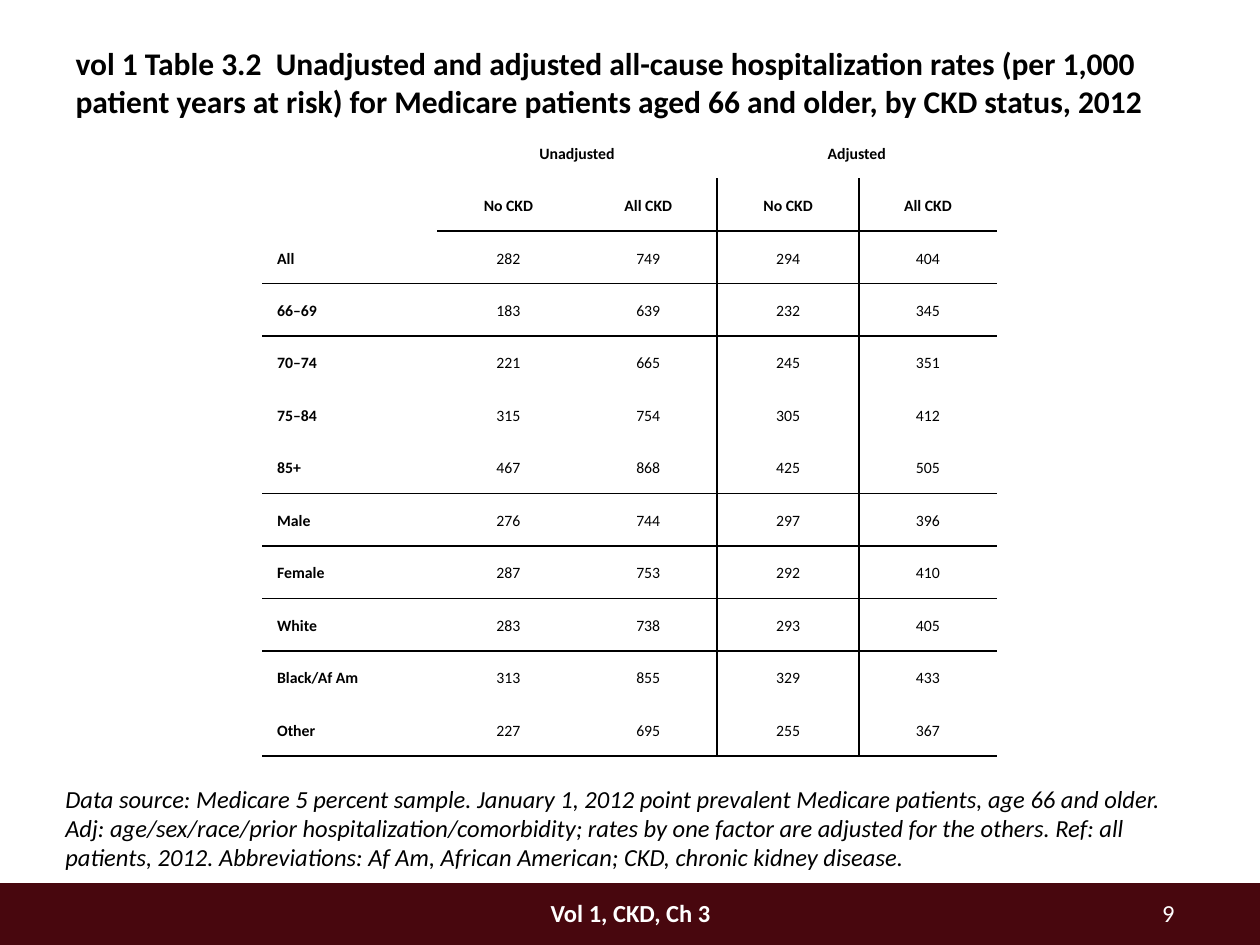
"""Build a slide with a table of hospitalization rates by CKD status."""
from lxml import etree
from pptx import Presentation, util as u
from pptx.dml.color import RGBColor
from pptx.enum import shapes, text
from pptx.oxml import ns

FONT = "Calibri"
COLORS = {"band": "48070E", "ink": "000000", "light": "FFFFFF"}


def write(tf, content, size, color="ink", bold=False, italic=False, align=text.PP_ALIGN.LEFT):
    tf.text = content
    tf.word_wrap = True
    p = tf.paragraphs[0]
    p.alignment = align
    for r in p.runs:
        r.font.name, r.font.size = FONT, u.Pt(size)
        r.font.bold, r.font.italic = bold, italic
        r.font.color.rgb = RGBColor.from_string(COLORS[color])
    return p


def add_border(cell, side):
    ln = etree.SubElement(cell._tc.get_or_add_tcPr(), ns.qn(f"a:ln{side}"), w=str(u.Pt(1)))
    fill = etree.SubElement(ln, ns.qn("a:solidFill"))
    etree.SubElement(fill, ns.qn("a:srgbClr"), val=COLORS["ink"])


prs = Presentation()
prs.slide_width, prs.slide_height = u.Inches(10), u.Inches(7.5)
s = prs.slides.add_slide(prs.slide_layouts[5])

band = s.shapes.add_shape(
    shapes.MSO_SHAPE.RECTANGLE, u.Inches(0), u.Inches(7.01), u.Inches(10), u.Inches(0.5))
band.shadow.inherit = False
band.fill.solid()
band.fill.fore_color.rgb = RGBColor.from_string(COLORS["band"])
band.line.fill.background()

title = s.shapes.title
title.left, title.top = u.Inches(0.5), u.Inches(0.3)
title.width, title.height = u.Inches(9), u.Inches(0.6)
title.text_frame.auto_size = text.MSO_AUTO_SIZE.NONE
title.text_frame.vertical_anchor = text.MSO_ANCHOR.TOP
write(title.text_frame,
      "vol 1 Table 3.2  Unadjusted and adjusted all-cause hospitalization rates "
      "(per 1,000 patient years at risk) for Medicare patients aged 66 and older, "
      "by CKD status, 2012", 18, bold=True)

note = ("Data source: Medicare 5 percent sample. January 1, 2012 point prevalent Medicare "
        "patients, age 66 and older. Adj: age/sex/race/prior hospitalization/comorbidity; "
        "rates by one factor are adjusted for the others. Ref: all patients, 2012. "
        "Abbreviations: Af Am, African American; CKD, chronic kidney disease.")
boxes = [
    ((3.92, 7.08, 2.17, 0.33), "Vol 1, CKD, Ch 3",
     dict(color="light", bold=True, align=text.PP_ALIGN.CENTER)),
    ((8.42, 7.08, 1, 0.3), "9", dict(color="light", align=text.PP_ALIGN.RIGHT)),
    ((0.42, 6.17, 9.08, 0.58), note, dict(italic=True)),
]
for place, content, style in boxes:
    sp = s.shapes.add_textbox(*map(u.Inches, place))
    write(sp.text_frame, content, 14, **style)

rows = [
    ("", "Unadjusted", "", "Adjusted", ""),
    ("", "No CKD", "All CKD", "No CKD", "All CKD"),
    ("All", 282, 749, 294, 404),
    ("66–69", 183, 639, 232, 345),
    ("70–74", 221, 665, 245, 351),
    ("75–84", 315, 754, 305, 412),
    ("85+", 467, 868, 425, 505),
    ("Male", 276, 744, 297, 396),
    ("Female", 287, 753, 292, 410),
    ("White", 283, 738, 293, 405),
    ("Black/Af Am", 313, 855, 329, 433),
    ("Other", 227, 695, 255, 367),
]
header_rows = 2
ruled_below = {1, 2, 6, 8, 11}
widths = [1.39, 1.13, 1.09, 1.13, 1.09]

frame = s.shapes.add_table(
    len(rows), len(widths), u.Inches(2.08), u.Inches(1), u.Inches(sum(widths)), u.Inches(5))
table = frame.table
table.first_row = table.horz_banding = False
no_style = "{2D5ABB26-0587-4C30-8999-92F81FD0307C}"
table._tbl.tblPr.find(ns.qn("a:tableStyleId")).text = no_style
for column, width in zip(table.columns, widths):
    column.width = u.Inches(width)

for i, row in enumerate(rows):
    for j, value in enumerate(row):
        cell = table.cell(i, j)
        cell.margin_left = cell.margin_right = u.Inches(0.12)
        cell.margin_top = cell.margin_bottom = 0
        cell.vertical_anchor = text.MSO_ANCHOR.MIDDLE
        p = write(cell.text_frame, str(value), 9, bold=i < header_rows or j == 0,
                  align=text.PP_ALIGN.CENTER if j else text.PP_ALIGN.LEFT)
        p.line_spacing = 1.15
        sides = {
            "L": j == 3 and i > 0,
            "R": j == 2 and i > 0,
            "T": i - 1 in ruled_below and (i > header_rows or j > 0),
            "B": i in ruled_below and (i >= header_rows or j > 0),
        }
        for side, shown in sides.items():
            if shown:
                add_border(cell, side)
        cell.fill.background()

for j in (1, 3):
    table.cell(0, j).merge(table.cell(0, j + 1))

prs.save("out.pptx")
